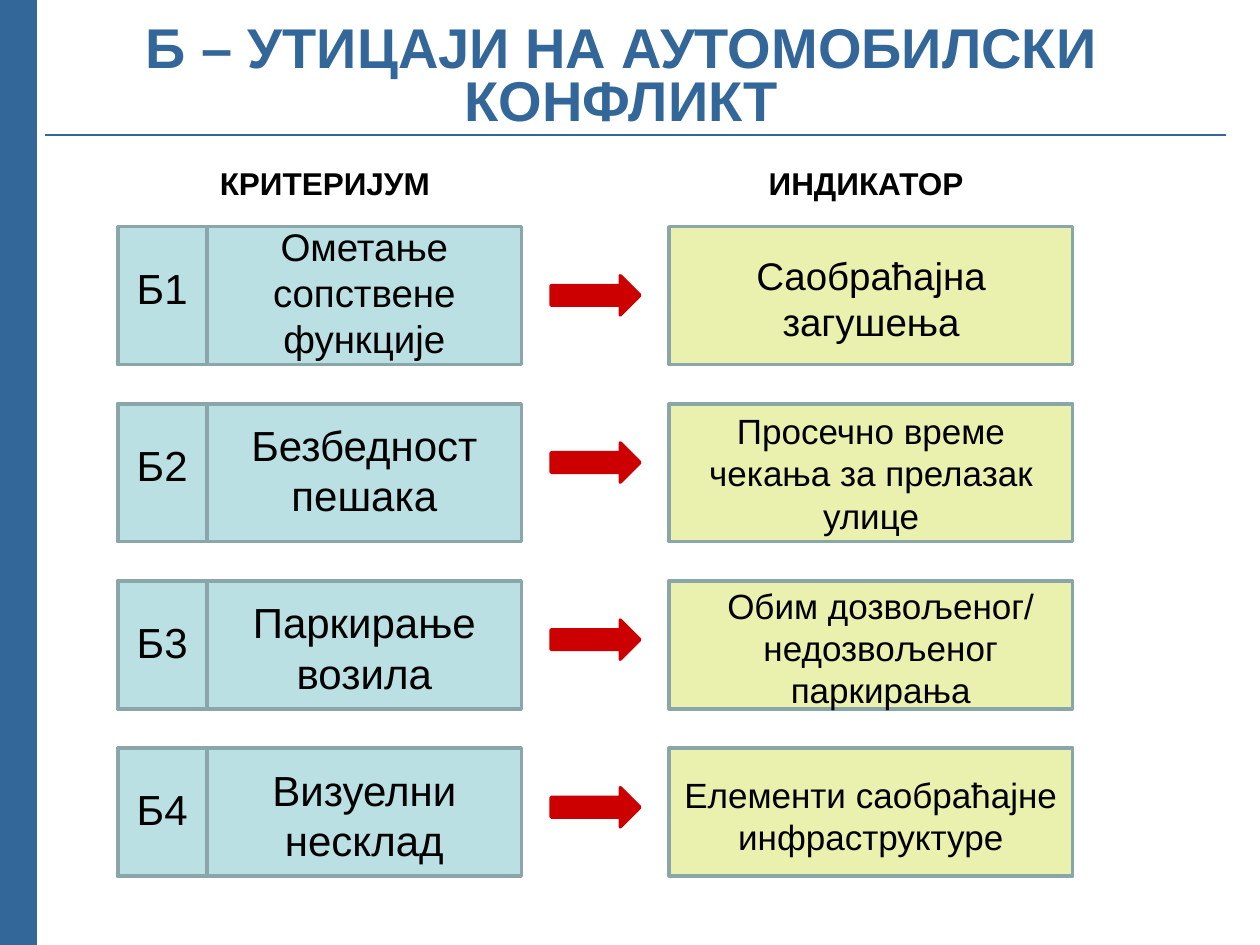
from typing import NamedTuple

from lxml import etree
from pptx import Presentation
from pptx.dml.color import RGBColor
from pptx.enum.shapes import MSO_CONNECTOR, MSO_SHAPE
from pptx.enum.text import MSO_ANCHOR, MSO_AUTO_SIZE, PP_ALIGN
from pptx.oxml.ns import qn
from pptx.util import Cm, Pt

RECTANGLE = MSO_SHAPE.RECTANGLE
RIGHT_ARROW = MSO_SHAPE.RIGHT_ARROW
STRAIGHT = MSO_CONNECTOR.STRAIGHT
CENTER = PP_ALIGN.CENTER
TOP = MSO_ANCHOR.TOP
MIDDLE = MSO_ANCHOR.MIDDLE
GROW = MSO_AUTO_SIZE.SHAPE_TO_FIT_TEXT
NO_FIT = MSO_AUTO_SIZE.NONE

BLUE = "336699"
TEAL = "BBE0E3"
LIME = "EAF0AE"
RED = "CC0000"
BORDER = "8AA6A8"
BLACK = "000000"

CRITERION_LEFT = 2.38
INDICATOR_LEFT = 13.49
BOX_WIDTH = 8.13
CODE_WIDTH = 1.79


class Row(NamedTuple):
    code: str
    top: float
    height: float
    arrow_top: float
    criterion: str
    criterion_area: tuple
    criterion_size: int
    indicator: str
    indicator_area: tuple
    indicator_size: int


ROWS = [
    Row("Б1", 4.57, 2.78, 5.56,
        "Ометање сопствене функције", (3.97, 4.37, 6.75, 3.07), 22,
        "Саобраћајна загушења", (13.69, 4.96, 7.74, 2.14), 22),
    Row("Б2", 8.14, 2.78, 8.93,
        "Безбедност пешака", (4.17, 8.33, 6.35, 2.31), 24,
        "Просечно време чекања за прелазак улице", (13.69, 8.14, 7.74, 2.82), 20),
    Row("Б3", 11.71, 2.58, 12.5,
        "Паркирање возила", (4.17, 11.91, 6.35, 2.31), 24,
        "Обим дозвољеног/ недозвољеног паркирања", (13.69, 11.66, 8.13, 2.82), 20),
    Row("Б4", 15.08, 2.58, 15.88,
        "Визуелни несклад", (4.17, 15.28, 6.35, 2.31), 24,
        "Елементи саобраћајне инфраструктуре", (13.49, 15.47, 8.13, 1.96), 20),
]


def color(value):
    return RGBColor.from_string(value)


def add_text(page, text, area, size=24, ink=BLACK, bold=False,
             anchor=TOP, spacing=1.0, fit=GROW):
    box = page.shapes.add_textbox(*map(Cm, area))
    frame = box.text_frame
    frame.word_wrap = True
    frame.auto_size = fit
    frame.vertical_anchor = anchor
    para = frame.paragraphs[0]
    para.alignment = CENTER
    para.line_spacing = spacing
    span = para.add_run()
    span.text = text
    span.font.name = "Arial"
    span.font.size = Pt(size)
    span.font.bold = bold
    span.font.color.rgb = color(ink)


def add_block(page, kind, area, fill, border):
    shape = page.shapes.add_shape(kind, *map(Cm, area))
    shape.shadow.inherit = False
    shape.fill.solid()
    shape.fill.fore_color.rgb = color(fill)
    shape.line.color.rgb = color(border)
    shape.line.width = Pt(2)


def add_line(page, ends, width):
    line = page.shapes.add_connector(STRAIGHT, *map(Cm, ends))
    line.line.color.rgb = color(BLUE)
    line.line.width = Pt(width)
    properties = line._element.find(qn("p:spPr"))
    etree.SubElement(properties, qn("a:effectLst"))


def add_row(page, row):
    for left, width, fill in (
        (CRITERION_LEFT, BOX_WIDTH, TEAL),
        (CRITERION_LEFT, CODE_WIDTH, TEAL),
        (INDICATOR_LEFT, BOX_WIDTH, LIME),
    ):
        add_block(page, RECTANGLE, (left, row.top, width, row.height), fill, BORDER)
    add_block(page, RIGHT_ARROW, (11.11, row.arrow_top, 1.79, 0.79), RED, RED)
    add_text(page, row.code, (2.18, row.top + 0.6, 2.18, 1.27))
    add_text(page, row.criterion, row.criterion_area, size=row.criterion_size)
    add_text(page, row.indicator, row.indicator_area, size=row.indicator_size)


def main():
    deck = Presentation()
    deck.slide_width = Cm(25.4)
    deck.slide_height = Cm(19.05)
    page = deck.slides.add_slide(deck.slide_layouts[6])
    add_line(page, (0.05, 0, 0.05, 19.05), 40)
    add_line(page, (0.9, 2.72, 24.71, 2.72), 0.75)
    add_text(page, "Б – УТИЦАЈИ НА АУТОМОБИЛСКИ КОНФЛИКТ", (1.1, 0, 22.86, 3.18),
             size=32, ink=BLUE, bold=True, anchor=MIDDLE, spacing=0.8, fit=NO_FIT)
    for heading, left in (("КРИТЕРИЈУМ", 2.98), ("ИНДИКАТОР", 13.89)):
        add_text(page, heading, (left, 3.18, 7.14, 1.02), size=18, bold=True)
    for row in ROWS:
        add_row(page, row)
    deck.save("out.pptx")


if __name__ == "__main__":
    main()
